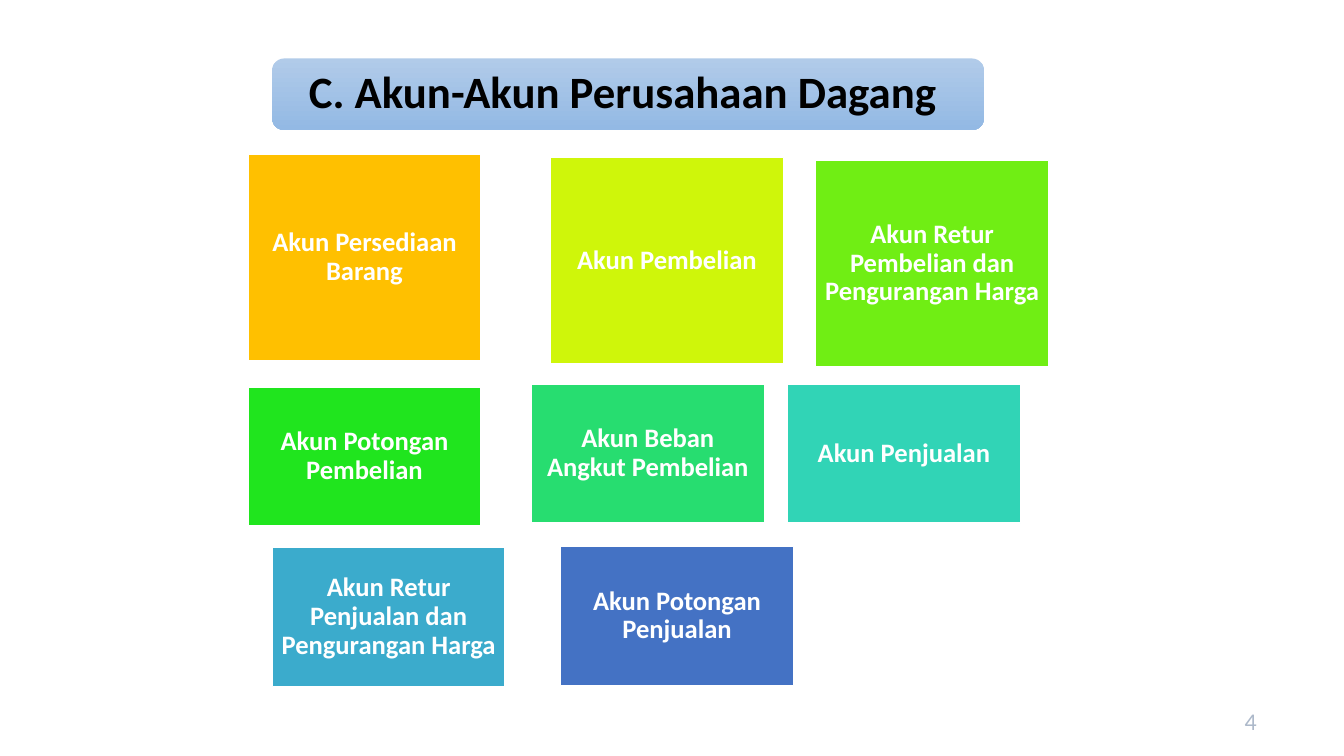
import pptx
import pptx.util
import pptx.dml.color
import pptx.enum.shapes
import pptx.enum.text
from dataclasses import dataclass

Inches = pptx.util.Inches
Pt = pptx.util.Pt
Shape = pptx.enum.shapes.MSO_SHAPE
Align = pptx.enum.text.PP_ALIGN
Anchor = pptx.enum.text.MSO_ANCHOR


@dataclass(frozen=True)
class Theme:
    font: str = "Calibri"
    white: str = "FFFFFF"
    black: str = "000000"
    muted: str = "ADB9CA"
    top: str = "B1CBE9"
    base: str = "93B9E4"
    tiles: tuple = ("FFC000", "CFF60A", "70EE14", "20E51E",
                    "27DD70", "31D4B6", "3BABCC", "4472C4")
    head: float = 32
    body: float = 19
    small: float = 17.1


def color(code):
    return pptx.dml.color.RGBColor.from_string(code)


def write(shape, text, *, font, size, ink, bold=False, align=Align.CENTER,
          anchor=Anchor.MIDDLE, left=0.08, pad=0.08, space=0.9):
    frame = shape.text_frame
    frame.word_wrap = True
    frame.vertical_anchor = anchor
    frame.margin_left = Inches(left)
    frame.margin_right = frame.margin_top = frame.margin_bottom = Inches(pad)
    para = frame.paragraphs[0]
    para.alignment = align
    para.line_spacing = space
    run = para.add_run()
    run.text = text
    run.font.name = font
    run.font.size = Pt(size)
    run.font.bold = bold
    run.font.color.rgb = color(ink)


class Deck:
    """Draw the elements of a slide in one theme."""

    def __init__(self, slide, theme):
        self.slide = slide
        self.theme = theme

    def shape(self, kind, *box):
        item = self.slide.shapes.add_shape(kind, *map(Inches, box))
        item.shadow.inherit = False
        return item

    def title(self, text, *box):
        look = self.theme
        bar = self.shape(Shape.ROUNDED_RECTANGLE, *box)
        bar.line.fill.background()
        bar.fill.gradient()
        bar.fill.gradient_angle = 270
        for stop, code in zip(bar.fill.gradient_stops, (look.top, look.base)):
            stop.color.rgb = color(code)
        for stop, place in zip(bar.fill.gradient_stops, (0, 1)):
            stop.position = place
        write(bar, text, font=look.font, size=look.head, ink=look.black,
              bold=True, align=Align.LEFT, left=0.33, pad=0.13)

    def tile(self, text, fill, *box):
        look = self.theme
        card = self.shape(Shape.RECTANGLE, *box)
        card.fill.solid()
        card.fill.fore_color.rgb = color(fill)
        card.line.color.rgb = color(look.white)
        card.line.width = Pt(1)
        write(card, text, font=look.font, size=look.body, ink=look.white,
              bold=True)

    def number(self, text, *box):
        look = self.theme
        label = self.slide.shapes.add_textbox(*map(Inches, box))
        write(label, text, font=look.font, size=look.small, ink=look.muted,
              anchor=Anchor.TOP, left=0.1, pad=0.05, space=1.0)


def main():
    show = pptx.Presentation()
    show.slide_width = Inches(13.33)
    show.slide_height = Inches(7.5)
    theme = Theme()
    deck = Deck(show.slides.add_slide(show.slide_layouts[6]), theme)

    deck.title("C. Akun-Akun Perusahaan Dagang", 2.7, 0.58, 7.06, 0.71)
    deck.number("4", 12.05, 6.96, 0.66, 0.39)

    wide, tall, short = 2.31, 2.05, 1.38
    cards = (
        ("Akun Persediaan Barang", 2.46, 1.53, tall),
        ("Akun Pembelian", 5.46, 1.56, tall),
        ("Akun Retur Pembelian dan Pengurangan Harga", 8.09, 1.59, tall),
        ("Akun Potongan Pembelian", 2.46, 3.84, short),
        ("Akun Beban Angkut Pembelian", 5.27, 3.81, short),
        ("Akun Penjualan", 7.81, 3.81, short),
        ("Akun Retur Penjualan dan Pengurangan Harga", 2.7, 5.43, short),
        ("Akun Potongan Penjualan", 5.56, 5.42, short),
    )
    for (text, left, top, high), fill in zip(cards, theme.tiles):
        deck.tile(text, fill, left, top, wide, high)

    show.save("out.pptx")


if __name__ == "__main__":
    main()
